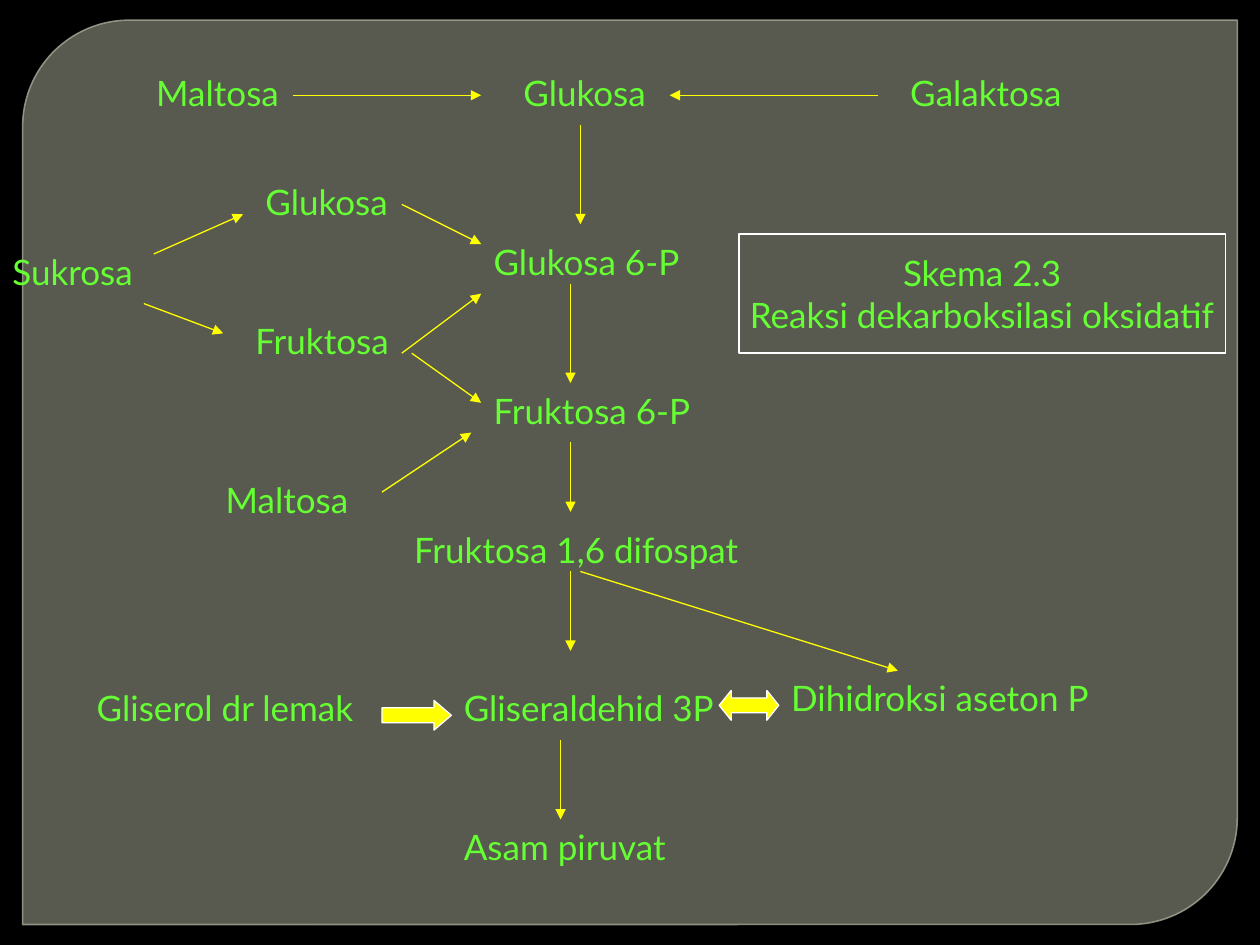
from dataclasses import dataclass
from lxml.etree import SubElement
from pptx import Presentation
from pptx.dml.color import RGBColor
from pptx.enum.shapes import MSO_CONNECTOR, MSO_SHAPE
from pptx.enum.text import MSO_ANCHOR, MSO_AUTO_SIZE, PP_ALIGN
from pptx.oxml.ns import qn
from pptx.shapes.autoshape import Shape
from pptx.slide import Slide
from pptx.text.text import TextFrame
from pptx.util import Inches, Length, Mm, Pt


@dataclass(frozen=True)
class Theme:
    back: RGBColor = RGBColor(0, 0, 0)
    panel: RGBColor = RGBColor(0x88, 0x8B, 0x7B)
    edge: RGBColor = RGBColor(0x9D, 0xA0, 0x90)
    text: RGBColor = RGBColor(0x66, 0xFF, 0x33)
    arrow: RGBColor = RGBColor(0xFF, 0xFF, 0)
    frame: RGBColor = RGBColor(0xFF, 0xFF, 0xFF)
    font: str = "Lato"
    size: Length = Pt(20)
    thin: Length = Pt(0.75)


@dataclass(frozen=True)
class Label:
    text: str
    col: float
    row: float
    cols: float


@dataclass(frozen=True)
class Arrow:
    col: float
    row: float
    to_col: float
    to_row: float


@dataclass(frozen=True)
class Block:
    kind: MSO_SHAPE
    col: float
    row: float
    cols: float
    rows: float
    adjust: tuple[float, ...] = ()


THEME = Theme()
WIDE, HIGH = Inches(10), Inches(7.5)
CELL = Mm(2)
LEFT, TOP = Mm(1), Mm(1.2)
LABEL_ROWS = 5.5

LABELS = [
    Label("Maltosa", 14, 6, 16),
    Label("Glukosa", 51, 6, 16),
    Label("Galaktosa", 90, 6, 18),
    Label("Glukosa", 25, 17, 15),
    Label("Glukosa 6-P", 48, 23, 22),
    Label("Sukrosa", -0.5, 24, 16.5),
    Label("Fruktosa", 24, 31, 17),
    Label("Fruktosa 6-P", 48, 38, 23),
    Label("Maltosa", 21, 47, 15),
    Label("Fruktosa 1,6 difospat", 40, 52, 36),
    Label("Gliserol dr lemak", 8, 68, 29),
    Label("Gliseraldehid 3P", 45, 68, 29),
    Label("Dihidroksi aseton P", 78, 67, 34),
    Label("Asam piruvat", 45, 82, 24),
]
ARROWS = [
    Arrow(29, 9, 48, 9),
    Arrow(88, 9, 67, 9),
    Arrow(58, 12, 58, 22),
    Arrow(40, 20, 48, 24),
    Arrow(40, 35, 48, 29),
    Arrow(15, 25, 24, 21),
    Arrow(14, 30, 22, 33),
    Arrow(41, 35, 48, 40),
    Arrow(57, 28, 57, 38),
    Arrow(38, 49, 47, 43),
    Arrow(57, 44, 57, 51),
    Arrow(57, 57, 57, 65),
    Arrow(58, 57, 90, 67),
    Arrow(56, 74, 56, 82),
]
BLOCKS = [
    Block(MSO_SHAPE.LEFT_RIGHT_ARROW, 72, 69, 6, 3, (0.5, 0.4)),
    Block(MSO_SHAPE.RIGHT_ARROW, 38, 70, 7, 3, (0.5, 0.585)),
]
TITLE = Block(MSO_SHAPE.RECTANGLE, 74, 23, 49, 12)
TITLE_LINES = ["Skema 2.3", "Reaksi dekarboksilasi oksidatif"]


def span(cells: float) -> Length:
    return Length(round(cells * CELL))


def spot(col: float, row: float) -> tuple[Length, Length]:
    """Slide position of a grid point."""
    return Length(LEFT + span(col)), Length(TOP + span(row))


def fade(fill_xml, share: int) -> None:
    """Make the solid colour below fill_xml opaque to share percent."""
    color = next(fill_xml.iter(qn("a:srgbClr")))
    SubElement(color, qn("a:alpha"), val=str(share * 1000))


def write(frame: TextFrame, lines: list[str], align: PP_ALIGN) -> None:
    for i, line in enumerate(lines):
        para = frame.paragraphs[0] if i == 0 else frame.add_paragraph()
        para.alignment = align
        run = para.add_run()
        run.text = line
        run.font.name = THEME.font
        run.font.size = THEME.size
        run.font.color.rgb = THEME.text


def add_panel(slide: Slide) -> None:
    panel = slide.shapes.add_shape(
        MSO_SHAPE.ROUND_2_DIAG_RECTANGLE,
        round(WIDE * 0.018), round(HIGH * 0.0213),
        round(WIDE * 0.964), round(HIGH * 0.957))
    panel.shadow.inherit = False
    panel.adjustments[0] = 0.118
    panel.adjustments[1] = 0
    panel.fill.solid()
    panel.fill.fore_color.rgb = THEME.panel
    panel.line.color.rgb = THEME.edge
    panel.line.width = Pt(0.87)
    props = panel.element.spPr
    fade(props.find(qn("a:solidFill")), 65)
    fade(props.find(qn("a:ln")), 88)


def add_label(slide: Slide, label: Label) -> None:
    box = slide.shapes.add_textbox(
        *spot(label.col, label.row), span(label.cols), span(LABEL_ROWS))
    frame = box.text_frame
    frame.word_wrap = True
    frame.auto_size = MSO_AUTO_SIZE.SHAPE_TO_FIT_TEXT
    write(frame, [label.text], PP_ALIGN.LEFT)


def add_arrow(slide: Slide, arrow: Arrow) -> None:
    line = slide.shapes.add_connector(
        MSO_CONNECTOR.STRAIGHT,
        *spot(arrow.col, arrow.row), *spot(arrow.to_col, arrow.to_row))
    line.line.color.rgb = THEME.arrow
    line.line.width = THEME.thin
    props = line.element.spPr
    SubElement(props.find(qn("a:ln")), qn("a:tailEnd"), type="triangle")
    SubElement(props, qn("a:effectLst"))


def add_block(slide: Slide, block: Block) -> Shape:
    shape = slide.shapes.add_shape(
        block.kind, *spot(block.col, block.row),
        span(block.cols), span(block.rows))
    shape.shadow.inherit = False
    for i, value in enumerate(block.adjust):
        shape.adjustments[i] = value
    shape.fill.solid()
    shape.fill.fore_color.rgb = THEME.arrow
    shape.line.color.rgb = THEME.frame
    shape.line.width = THEME.thin
    return shape


def add_title(slide: Slide) -> None:
    box = add_block(slide, TITLE)
    box.fill.background()
    frame = box.text_frame
    frame.word_wrap = False
    frame.vertical_anchor = MSO_ANCHOR.MIDDLE
    write(frame, TITLE_LINES, PP_ALIGN.CENTER)


def main() -> None:
    deck = Presentation()
    deck.slide_width, deck.slide_height = WIDE, HIGH
    slide = deck.slides.add_slide(deck.slide_layouts[6])
    slide.background.fill.solid()
    slide.background.fill.fore_color.rgb = THEME.back
    add_panel(slide)
    for label in LABELS:
        add_label(slide, label)
    for arrow in ARROWS:
        add_arrow(slide, arrow)
    for block in BLOCKS:
        add_block(slide, block)
    add_title(slide)
    deck.save("out.pptx")


if __name__ == "__main__":
    main()
